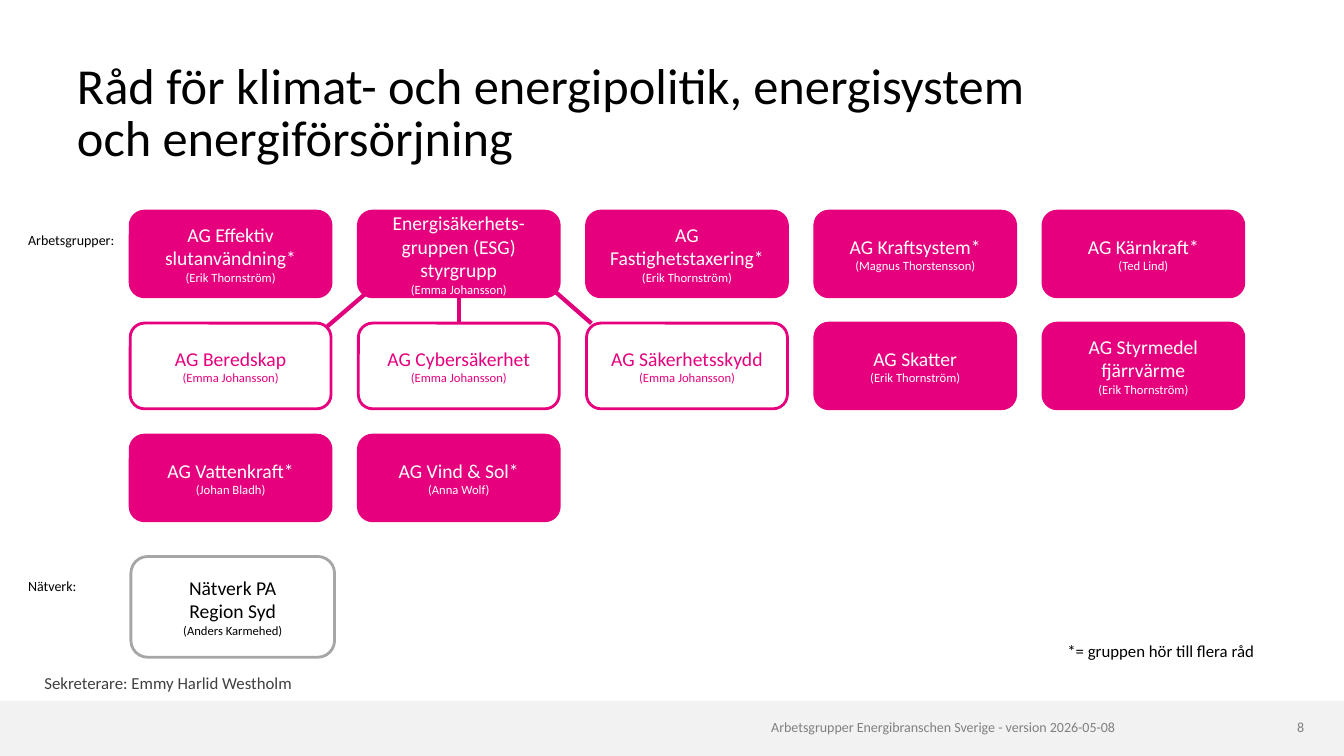
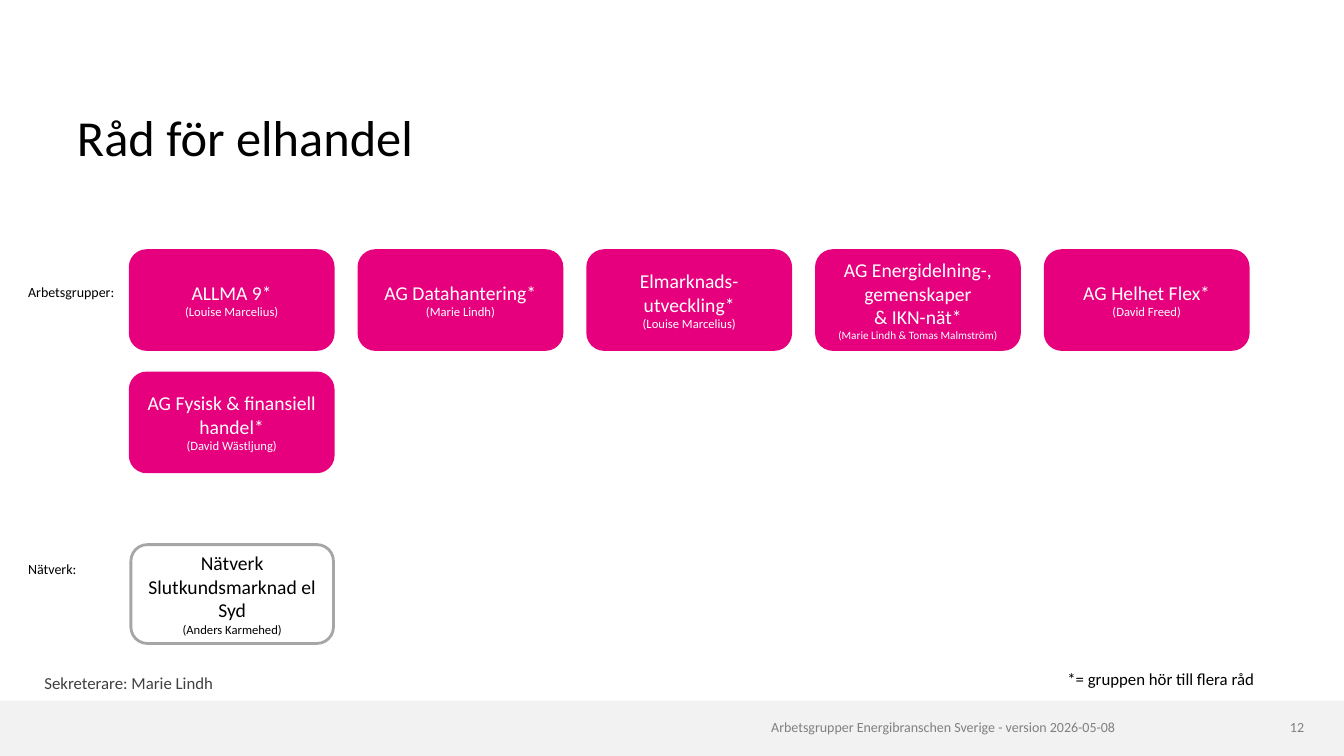
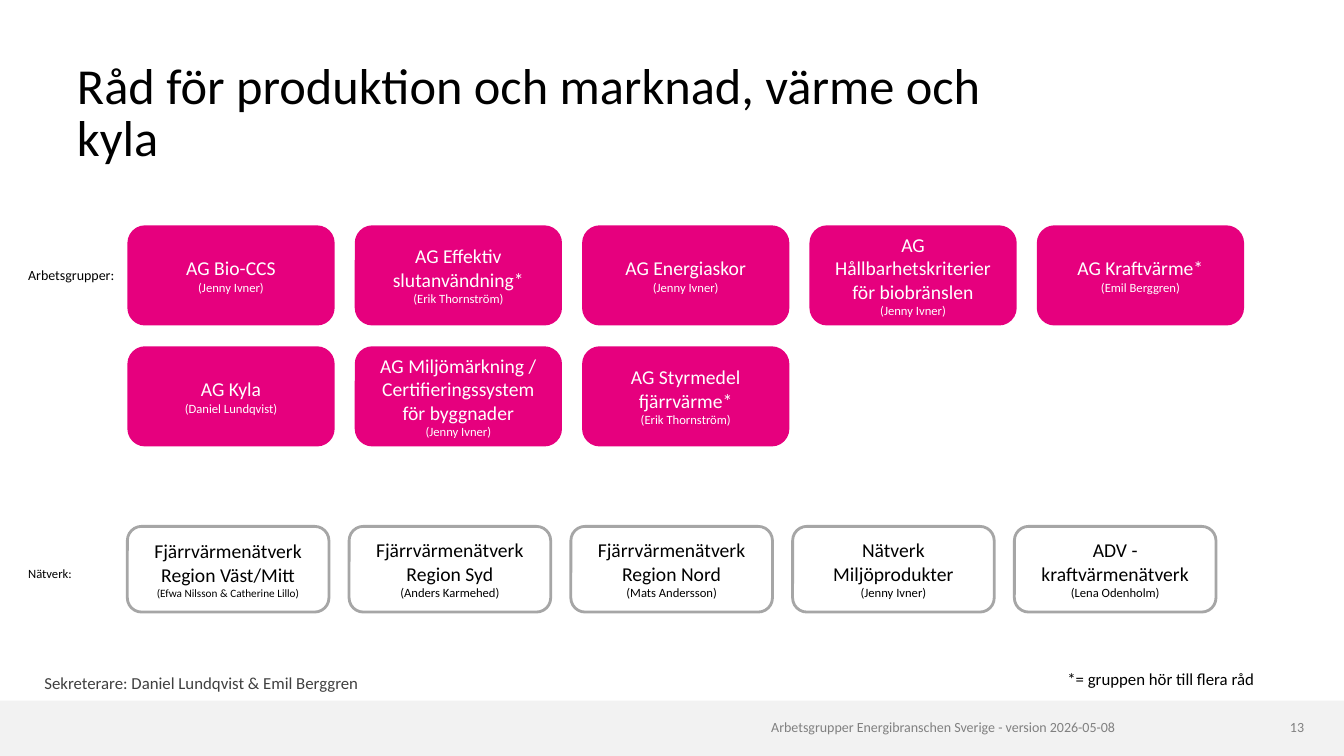
"""Builds three slides that show the working groups of an energy association's councils."""
import pptx
import pptx.dml.color
import pptx.enum.shapes
import pptx.enum.text
import pptx.oxml
import pptx.oxml.ns
import pptx.util

Pt = pptx.util.Pt
ALIGN = pptx.enum.text.PP_ALIGN
ANCHOR = pptx.enum.text.MSO_ANCHOR
SHAPE = pptx.enum.shapes.MSO_SHAPE
STRAIGHT = pptx.enum.shapes.MSO_CONNECTOR.STRAIGHT

FONT = "Calibri"
WIDTH, HEIGHT = 960, 540
COLUMNS = 5
COLORS = {
    "magenta": "E6007E",
    "link": "E1007B",
    "white": "FFFFFF",
    "black": "000000",
    "gray": "A6A6A6",
    "footer": "808080",
    "secretary": "404040",
    "band": "F2F2F2",
}
STYLES = {
    "group": ("magenta", "magenta", "white"),
    "subgroup": ("white", "magenta", "magenta"),
    "network": (None, "gray", "black"),
}
FOOTER = "Arbetsgrupper Energibranschen Sverige - version 2026-05-08"

COUNCILS = [
    {
        "number": 8,
        "title": "Råd för klimat- och energipolitik, energisystem och energiförsörjning",
        "secretary": "Emmy Harlid Westholm",
        "note_top": 456,
        "labels": [("Arbetsgrupper:", 163.5, 10), ("Nätverk:", 410.5, 10)],
        "links": [(265.5, 206, 234, 233), (390.5, 203, 422.5, 231)],
        "group_grid": (93, 150.8, 163, 80, 143.5, 61.2),
        "groups": [
            ("AG Effektiv slutanvändning*", "Erik Thornström", "group"),
            ("Energisäkerhets-gruppen (ESG) styrgrupp", "Emma Johansson", "group"),
            ("AG Fastighetstaxering*", "Erik Thornström", "group"),
            ("AG Kraftsystem*", "Magnus Thorstensson", "group"),
            ("AG Kärnkraft*", "Ted Lind", "group"),
            ("AG Beredskap", "Emma Johansson", "subgroup"),
            ("AG Cybersäkerhet", "Emma Johansson", "subgroup"),
            ("AG Säkerhetsskydd", "Emma Johansson", "subgroup"),
            ("AG Skatter", "Erik Thornström", "group"),
            ("AG Styrmedel fjärrvärme", "Erik Thornström", "group"),
            ("AG Vattenkraft*", "Johan Bladh", "group"),
            ("AG Vind & Sol*", "Anna Wolf", "group"),
        ],
        "joined": [(1, 6)],
        "network_grid": (93.5, 397.5, 0, 0, 145.5, 72),
        "networks": [("Nätverk PA\nRegion Syd", "Anders Karmehed", "network")],
    },
    {
        "number": 12,
        "title": "Råd för elhandel",
        "secretary": "Marie Lindh",
        "note_top": 476,
        "labels": [("Arbetsgrupper:", 200, 10), ("Nätverk:", 398, 10)],
        "links": [],
        "group_grid": (93, 179, 163.4, 87.4, 145, 70.6),
        "groups": [
            ("ALLMA 9*", "Louise Marcelius", "group"),
            ("AG Datahantering*", "Marie Lindh", "group"),
            ("Elmarknads-utveckling*", "Louise Marcelius", "group"),
            ("AG Energidelning-, gemenskaper\n& IKN-nät*", "Marie Lindh & Tomas Malmström", "group"),
            ("AG Helhet Flex*", "David Freed", "group"),
            ("AG Fysisk & finansiell handel*", "David Wästljung", "group"),
        ],
        "joined": [],
        "network_grid": (93.5, 389, 0, 0, 144.7, 70.6),
        "networks": [("Nätverk Slutkundsmarknad el Syd", "Anders Karmehed", "network")],
    },
    {
        "number": 13,
        "title": "Råd för produktion och marknad, värme och kyla",
        "secretary": "Daniel Lundqvist & Emil Berggren",
        "note_top": 476,
        "labels": [("Arbetsgrupper:", 188, 10), ("Nätverk:", 401.8, 9)],
        "links": [],
        "group_grid": (92, 162, 162.4, 86.4, 146, 69.5),
        "groups": [
            ("AG Bio-CCS", "Jenny Ivner", "group"),
            ("AG Effektiv slutanvändning*", "Erik Thornström", "group"),
            ("AG Energiaskor", "Jenny Ivner", "group"),
            ("AG Hållbarhetskriterier för biobränslen", "Jenny Ivner", "group"),
            ("AG Kraftvärme*", "Emil Berggren", "group"),
            ("AG Kyla", "Daniel Lundqvist", "group"),
            ("AG Miljömärkning / Certifieringssystem för byggnader", "Jenny Ivner", "group"),
            ("AG Styrmedel fjärrvärme*", "Erik Thornström", "group"),
        ],
        "joined": [],
        "network_grid": (91, 376, 158.4, 0, 144, 61.2),
        "networks": [
            ("Fjärrvärmenätverk Region Väst/Mitt", "Efwa Nilsson & Catherine Lillo", "network"),
            ("Fjärrvärmenätverk Region Syd", "Anders Karmehed", "network"),
            ("Fjärrvärmenätverk Region Nord", "Mats Andersson", "network"),
            ("Nätverk\nMiljöprodukter", "Jenny Ivner", "network"),
            ("ADV - kraftvärmenätverk", "Lena Odenholm", "network"),
        ],
    },
]


def rgb(name):
    return pptx.dml.color.RGBColor.from_string(COLORS[name])


def style_paragraph(para, size, color, align=ALIGN.LEFT, spacing=None):
    para.alignment = align
    para.line_spacing = spacing
    para.font.name = FONT
    para.font.size = Pt(size)
    para.font.color.rgb = rgb(color)


def add_text(page, text, area, size, color="black", align=ALIGN.LEFT,
             spacing=None, anchor=ANCHOR.TOP, inset=False):
    box = page.shapes.add_textbox(*map(Pt, area))
    frame = box.text_frame
    frame.word_wrap = True
    frame.vertical_anchor = anchor
    if not inset:
        frame.margin_left = frame.margin_right = 0
        frame.margin_top = frame.margin_bottom = 0
    para = frame.paragraphs[0]
    para.text = text
    style_paragraph(para, size, color, align, spacing)


def add_band(page):
    band = page.shapes.add_shape(SHAPE.RECTANGLE, 0, Pt(500.4), Pt(WIDTH), Pt(HEIGHT - 500.4))
    band.shadow.inherit = False
    band.fill.solid()
    band.fill.fore_color.rgb = rgb("band")
    band.line.fill.background()


def add_frame(page, council):
    add_band(page)
    add_text(page, FOOTER, (158.4, 513.4, 638, 14), 10, "footer", ALIGN.RIGHT)
    add_text(page, str(council["number"]), (903.5, 513.4, 28, 14), 10, "footer", ALIGN.RIGHT)
    add_text(page, council["title"], (55, 42, 685, 77), 36, spacing=0.85, anchor=ANCHOR.BOTTOM)
    add_text(page, f"Sekreterare: {council['secretary']}", (31.7, 480, 350, 16.5), 12,
             "secretary", spacing=0.97, anchor=ANCHOR.MIDDLE)
    add_text(page, "*= gruppen hör till flera råd", (755.3, council["note_top"], 155, 20), 12,
             spacing=0.9, inset=True)
    for label, top, size in council["labels"]:
        add_text(page, label, (13, top, 87, 16), size, spacing=0.9, inset=True)


def add_link(page, start_x, start_y, end_x, end_y):
    link = page.shapes.add_connector(STRAIGHT, Pt(start_x), Pt(start_y), Pt(end_x), Pt(end_y))
    link.line.color.rgb = rgb("link")
    link.line.width = Pt(3)
    link._element.spPr.append(pptx.oxml.parse_xml(f"<a:effectLst {pptx.oxml.ns.nsdecls('a')}/>"))
    return link


def add_card(page, area, name, person, style):
    fill, line, color = STYLES[style]
    card = page.shapes.add_shape(SHAPE.ROUNDED_RECTANGLE, *map(Pt, area))
    card.shadow.inherit = False
    if fill:
        card.fill.solid()
        card.fill.fore_color.rgb = rgb(fill)
    else:
        card.fill.background()
    card.line.color.rgb = rgb(line)
    card.line.width = Pt(2)
    frame = card.text_frame
    frame.word_wrap = True
    frame.vertical_anchor = ANCHOR.MIDDLE
    frame.text = f"{name}\n({person})"
    for para in frame.paragraphs:
        style_paragraph(para, 14, color, ALIGN.CENTER)
    frame.paragraphs[-1].font.size = Pt(8 if "&" in person else 9)
    return card


def add_cards(page, grid, entries):
    left, top, step_x, step_y, width, height = grid
    cards = []
    for index, entry in enumerate(entries):
        row, column = divmod(index, COLUMNS)
        area = (left + column * step_x, top + row * step_y, width, height)
        cards.append(add_card(page, area, *entry))
    return cards


def main():
    deck = pptx.Presentation()
    deck.slide_width, deck.slide_height = Pt(WIDTH), Pt(HEIGHT)
    for council in COUNCILS:
        page = deck.slides.add_slide(deck.slide_layouts[6])
        add_frame(page, council)
        for ends in council["links"]:
            add_link(page, *ends)
        cards = add_cards(page, council["group_grid"], council["groups"])
        add_cards(page, council["network_grid"], council["networks"])
        for upper, lower in council["joined"]:
            link = add_link(page, 0, 0, 0, 0)
            link.begin_connect(cards[upper], 2)
            link.end_connect(cards[lower], 0)
    deck.save("out.pptx")


if __name__ == "__main__":
    main()
